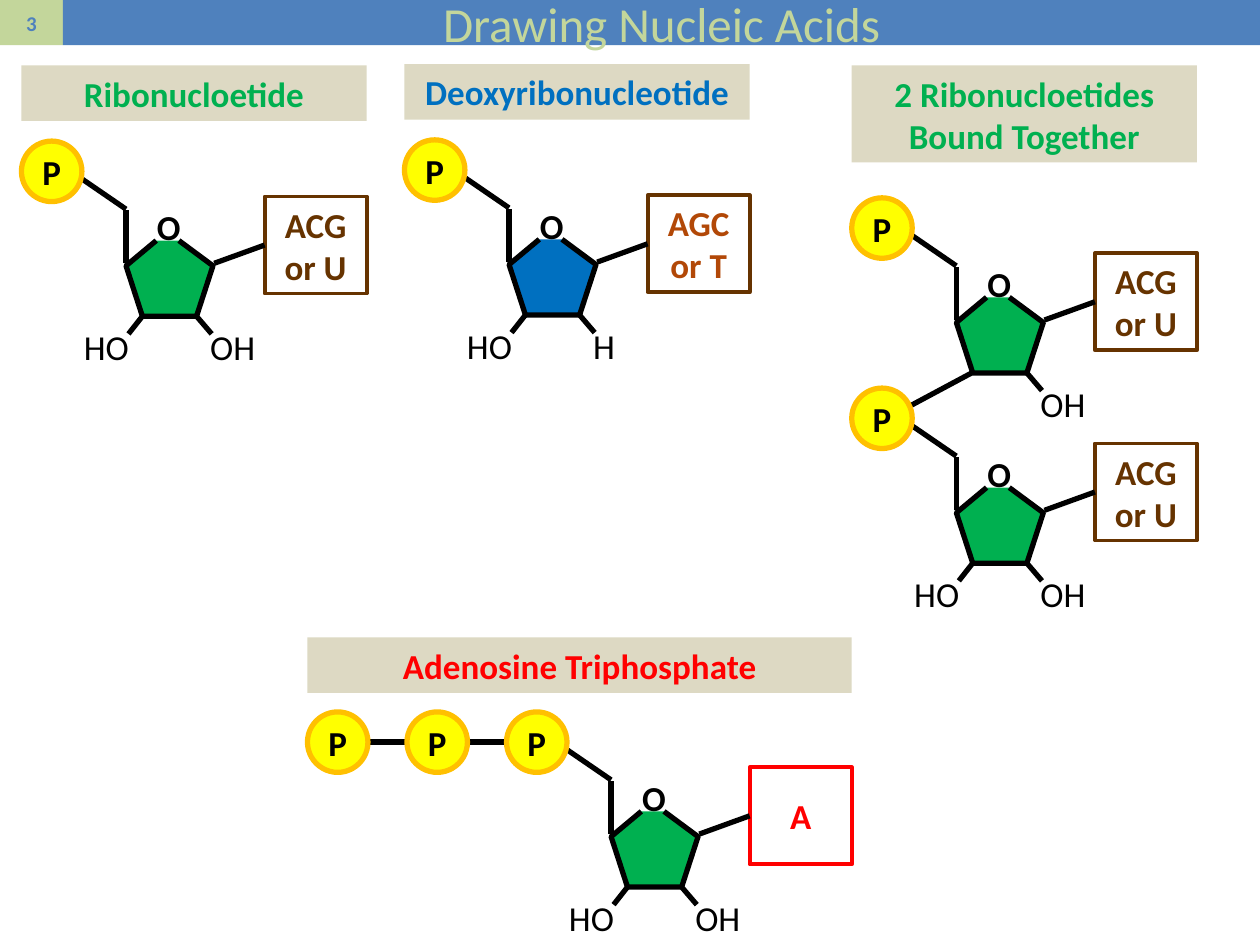
"""Builds the slide on drawing nucleic acids."""
from lxml.etree import SubElement
from pptx import Presentation
from pptx.dml.color import RGBColor
from pptx.enum.shapes import MSO_CONNECTOR, MSO_SHAPE
from pptx.enum.text import MSO_ANCHOR, PP_ALIGN
from pptx.oxml.ns import qn
from pptx.util import Inches, Pt

COLORS = {
    "black": "000000", "white": "FFFFFF", "bar": "4F81BD", "lime": "C3D69B",
    "heading": "DDD9C3", "green": "00B050", "blue": "0070C0", "red": "FF0000",
    "yellow": "FFFF00", "gold": "FFC000", "brown": "663300", "rust": "B24807",
}
PHOSPHATE_SIZE = 0.48
PHOSPHATE_STEP = 0.79
NUCLEOTIDE_STEP = 1.51
SUGAR_RING = [(1.25, 0.79), (1.52, 0.99), (1.39, 1.39),
              (0.96, 1.39), (0.83, 0.99), (1.07, 0.79)]


def rgb(color):
    """Return the named colour."""
    return RGBColor.from_string(COLORS[color])


def write(shape, text, size=20, color="black", bold=True, align=PP_ALIGN.CENTER, wrap=True):
    """Put formatted text into a shape."""
    frame = shape.text_frame
    frame.word_wrap = wrap
    frame.vertical_anchor = MSO_ANCHOR.MIDDLE
    paragraph = frame.paragraphs[0]
    paragraph.text = text
    paragraph.alignment = align
    for run in paragraph.runs:
        run.font.name = "Calibri"
        run.font.size = Pt(size)
        run.font.bold = bold
        run.font.color.rgb = rgb(color)


def paint(shape, fill, outline=None, weight=3):
    """Set fill and outline and drop the shadow."""
    shape.shadow.inherit = False
    shape.fill.solid()
    shape.fill.fore_color.rgb = rgb(fill)
    if outline:
        shape.line.color.rgb = rgb(outline)
        shape.line.width = Pt(weight)
    else:
        shape.line.fill.background()


def add_block(slide, box, text, fill, outline=None, weight=3, kind=MSO_SHAPE.RECTANGLE, **style):
    """Add a filled preset shape with text."""
    block = slide.shapes.add_shape(kind, *map(Inches, box))
    paint(block, fill, outline, weight)
    write(block, text, **style)
    return block


def add_heading(slide, left, top, text, color, width=2.74, height=0.44):
    """Add the heading above a molecule."""
    add_block(slide, (left, top, width, height), text, "heading", color=color)


def add_label(slide, left, top, width, text, **style):
    """Add an atom label."""
    label = slide.shapes.add_textbox(*map(Inches, (left, top, width, 0.44)))
    write(label, text, **style)


def add_bond(slide, start, end):
    """Add a straight black bond."""
    bond = slide.shapes.add_connector(MSO_CONNECTOR.STRAIGHT, *map(Inches, (*start, *end)))
    bond.line.color.rgb = rgb("black")
    bond.line.width = Pt(3)
    SubElement(bond._element.spPr, qn("a:effectLst"))
    return bond


def add_phosphate(slide, left, top):
    """Add a phosphate circle."""
    add_block(slide, (left, top, PHOSPHATE_SIZE, PHOSPHATE_SIZE), "P", "yellow", "gold",
              kind=MSO_SHAPE.OVAL, wrap=False)


def add_sugar(slide, left, top, color):
    """Add the ring with its oxygen."""
    ring = [(Inches(left + x), Inches(top + y)) for x, y in SUGAR_RING]
    builder = slide.shapes.build_freeform(*ring[0])
    builder.add_line_segments(ring[1:], close=False)
    paint(builder.convert_to_shape(), color, "black")
    add_label(slide, left + 0.95, top + 0.46, 0.44, "O")


def add_nucleotide(slide, left, top, base="ACG\nor U", base_color="brown", outline="brown",
                   sugar="green", left_group="HO", right_group="OH"):
    """Add a nucleotide whose phosphate starts at left, top."""
    def at(x, y):
        return left + x, top + y

    add_sugar(slide, left, top, sugar)
    add_bond(slide, at(0.83, 0.97), at(0.83, 0.55))
    add_bond(slide, at(0.83, 0.54), at(0.48, 0.3))
    add_phosphate(slide, left, top)

    base_box = add_block(slide, (*at(1.93, 0.44), 0.81, 0.77), base, "white", outline, 2.25,
                         color=base_color)
    add_bond(slide, at(1.93, 0.83), at(1.53, 0.97)).begin_connect(base_box, 1)

    add_bond(slide, at(1.39, 1.39), at(1.51, 1.53))
    add_label(slide, *at(1.4, 1.41), 0.63, right_group, bold=False, align=PP_ALIGN.LEFT)
    if left_group:
        add_bond(slide, at(0.96, 1.39), at(0.85, 1.53))
        add_label(slide, *at(0.36, 1.41), 0.63, left_group, bold=False)


def add_dinucleotide(slide, left, top):
    """Add two ribonucleotides bound together."""
    add_bond(slide, (left + 0.41, top + 1.68), (left + 0.97, top + 1.38))
    add_nucleotide(slide, left, top + NUCLEOTIDE_STEP)
    add_nucleotide(slide, left, top, left_group=None)


def add_triphosphate(slide, left, top):
    """Add adenosine triphosphate."""
    middle = top + PHOSPHATE_SIZE / 2
    for index in range(2):
        phosphate_left = left + index * PHOSPHATE_STEP
        add_bond(slide, (phosphate_left + PHOSPHATE_SIZE, middle),
                 (phosphate_left + PHOSPHATE_STEP, middle))
        add_phosphate(slide, phosphate_left, top)
    add_nucleotide(slide, left + 2 * PHOSPHATE_STEP, top, "A", "red", "red")


def main():
    """Build and save the slide."""
    deck = Presentation()
    deck.slide_width, deck.slide_height = Inches(10), Inches(7.5)
    slide = deck.slides.add_slide(deck.slide_layouts[6])

    add_block(slide, (0, 0, 0.5, 0.36), "3", "lime", size=12, color="bar")
    add_block(slide, (0.5, 0, 9.5, 0.36), "Drawing Nucleic Acids", "bar",
              size=28, color="lime", bold=False)

    add_heading(slide, 0.17, 0.52, "Ribonucloetide", "green")
    add_nucleotide(slide, 0.17, 1.12)

    add_heading(slide, 3.21, 0.51, "Deoxyribonucleotide", "blue")
    add_nucleotide(slide, 3.21, 1.11, "AGC or T", "rust", sugar="blue", right_group="H")

    add_heading(slide, 6.76, 0.52, "2 Ribonucloetides Bound Together", "green", height=0.77)
    add_dinucleotide(slide, 6.76, 1.57)

    add_heading(slide, 2.44, 5.06, "Adenosine Triphosphate", "red", width=4.32)
    add_triphosphate(slide, 2.44, 5.65)

    deck.save("out.pptx")


if __name__ == "__main__":
    main()
